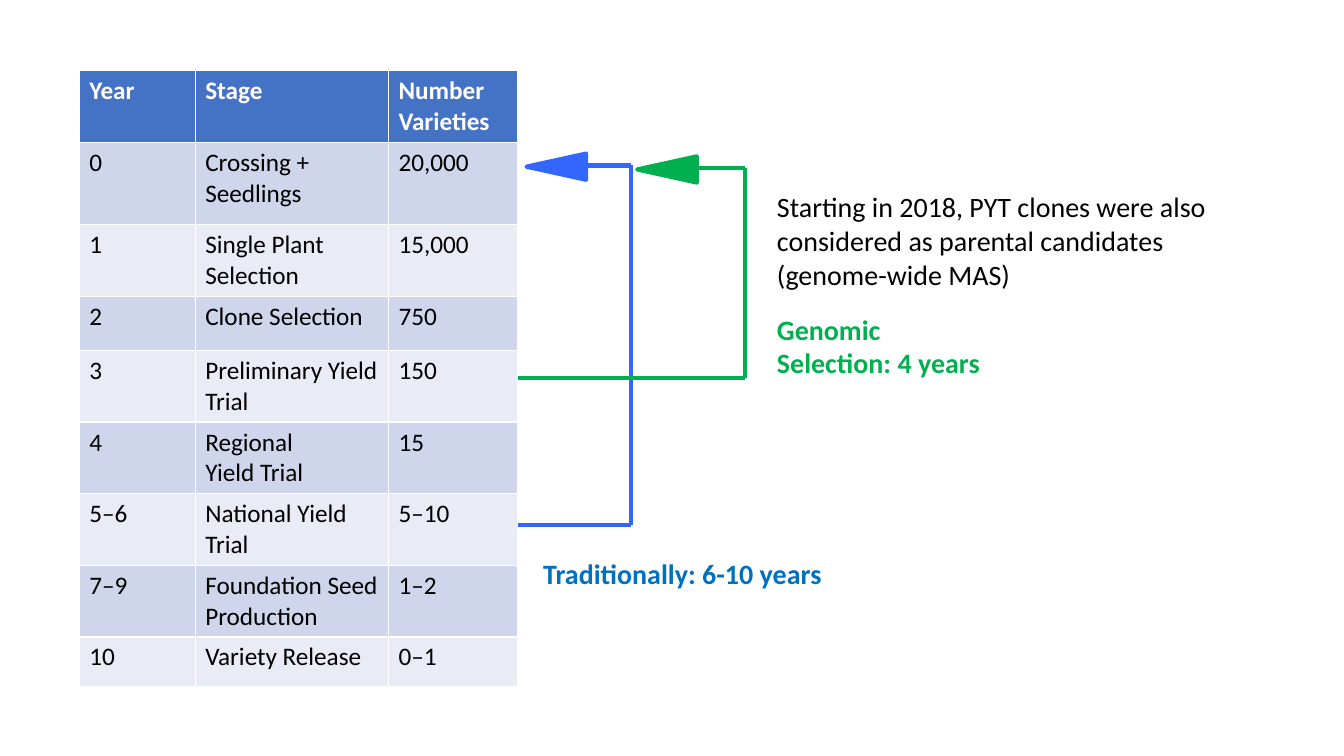
import pptx
import pptx.dml.color
import pptx.enum.shapes
import pptx.enum.text
import pptx.oxml.ns
import pptx.util
from lxml import etree
from pptx.util import Cm


def paint(color_format, hex_color):
    color_format.rgb = pptx.dml.color.RGBColor.from_string(hex_color)


def add_span(para, text, size, hex_color, bold):
    span = para.add_run()
    span.text = text
    span.font.name = "Calibri"
    span.font.size = pptx.util.Pt(size)
    span.font.bold = bold
    paint(span.font.color, hex_color)


deck = pptx.Presentation()
deck.slide_width, deck.slide_height = Cm(33.87), Cm(19.05)
page = deck.slides.add_slide(deck.slide_layouts[6])

# Breeding cycles: row where selected clones leave, path back to crossing
table_edge = 13.03
cycles = [
    # color, bend x, tip x, tip y, start y, head left
    ("3366FF", 15.9, 13.79, 4.17, 13.23, 13.69),
    ("00B050", 18.77, 16.66, 4.24, 9.52, 16.48),
]
for color, bend, tip_x, tip_y, start_y, head_left in cycles:
    corners = [(table_edge, start_y), (bend, start_y), (bend, tip_y), (tip_x, tip_y)]
    for (x1, y1), (x2, y2) in zip(corners, corners[1:]):
        line = page.shapes.add_connector(
            pptx.enum.shapes.MSO_CONNECTOR.STRAIGHT, Cm(x1), Cm(y1), Cm(x2), Cm(y2))
        line.line.width = pptx.util.Pt(3)
        paint(line.line.fill.fore_color if line.line.fill.type else line.line.color, color)
        etree.SubElement(line._element.spPr, pptx.oxml.ns.qn("a:effectLst"))
    # The last segment leads back to the crossing stage
    etree.SubElement(line.line._get_or_add_ln(), pptx.oxml.ns.qn("a:tailEnd"), type="arrow")

    head = page.shapes.add_shape(
        pptx.enum.shapes.MSO_SHAPE.ISOSCELES_TRIANGLE,
        Cm(head_left), Cm(tip_y - 0.72), Cm(0.66), Cm(1.5))
    head.rotation = 270
    head.shadow.inherit = False
    head.fill.solid()
    paint(head.fill.fore_color, color)
    paint(head.line.color, color)
    head.line.width = pptx.util.Pt(3)

# Stages of the breeding program
stages = [
    ("Year", "Stage", "Number Varieties"),
    ("0", "Crossing + Seedlings", "20,000"),
    ("1", "Single Plant Selection", "15,000"),
    ("2", "Clone Selection", "750"),
    ("3", "Preliminary Yield Trial", "150"),
    ("4", "Regional\nYield Trial", "15"),
    ("5–6", "National Yield Trial", "5–10"),
    ("7–9", "Foundation Seed Production", "1–2"),
    ("10", "Variety Release", "0–1"),
]
column_widths = [2.92, 4.87, 3.26]
row_heights = [1.78, 2.08, 1.78, 1.36, 1.78, 1.78, 1.78, 1.78, 1.24]
table = page.shapes.add_table(
    len(stages), len(column_widths), Cm(2), Cm(1.78),
    Cm(sum(column_widths)), Cm(sum(row_heights))).table
for column, width in zip(table.columns, column_widths):
    column.width = Cm(width)
for r, (row, height) in enumerate(zip(table.rows, row_heights)):
    row.height = Cm(height)
    is_header = r == 0
    fill_color = "4472C4" if is_header else ("E9EBF5", "CFD5EA")[r % 2]
    for cell, text in zip(row.cells, stages[r]):
        cell.fill.solid()
        paint(cell.fill.fore_color, fill_color)
        for i, part in enumerate(text.split("\n")):
            para = cell.text_frame.add_paragraph() if i else cell.text_frame.paragraphs[0]
            add_span(para, part, 18, "FFFFFF" if is_header else "000000", is_header)

# Captions beside the cycles
captions = [
    ("Traditionally: 6-10 years", 13.44, 13.9, 8.13, 1.12, "0070C0", True),
    ("Genomic Selection: 4 years", 19.33, 7.74, 5.74, 1.96, "00B050", True),
    ("Starting in 2018, PYT clones were also considered as parental candidates "
     "(genome-wide MAS)", 19.33, 4.66, 11.73, 2.82, "000000", False),
]
for text, left, top, width, height, color, bold in captions:
    box = page.shapes.add_textbox(Cm(left), Cm(top), Cm(width), Cm(height))
    box.text_frame.word_wrap = True
    box.text_frame.auto_size = pptx.enum.text.MSO_AUTO_SIZE.SHAPE_TO_FIT_TEXT
    add_span(box.text_frame.paragraphs[0], text, 20, color, bold)

deck.save("out.pptx")
